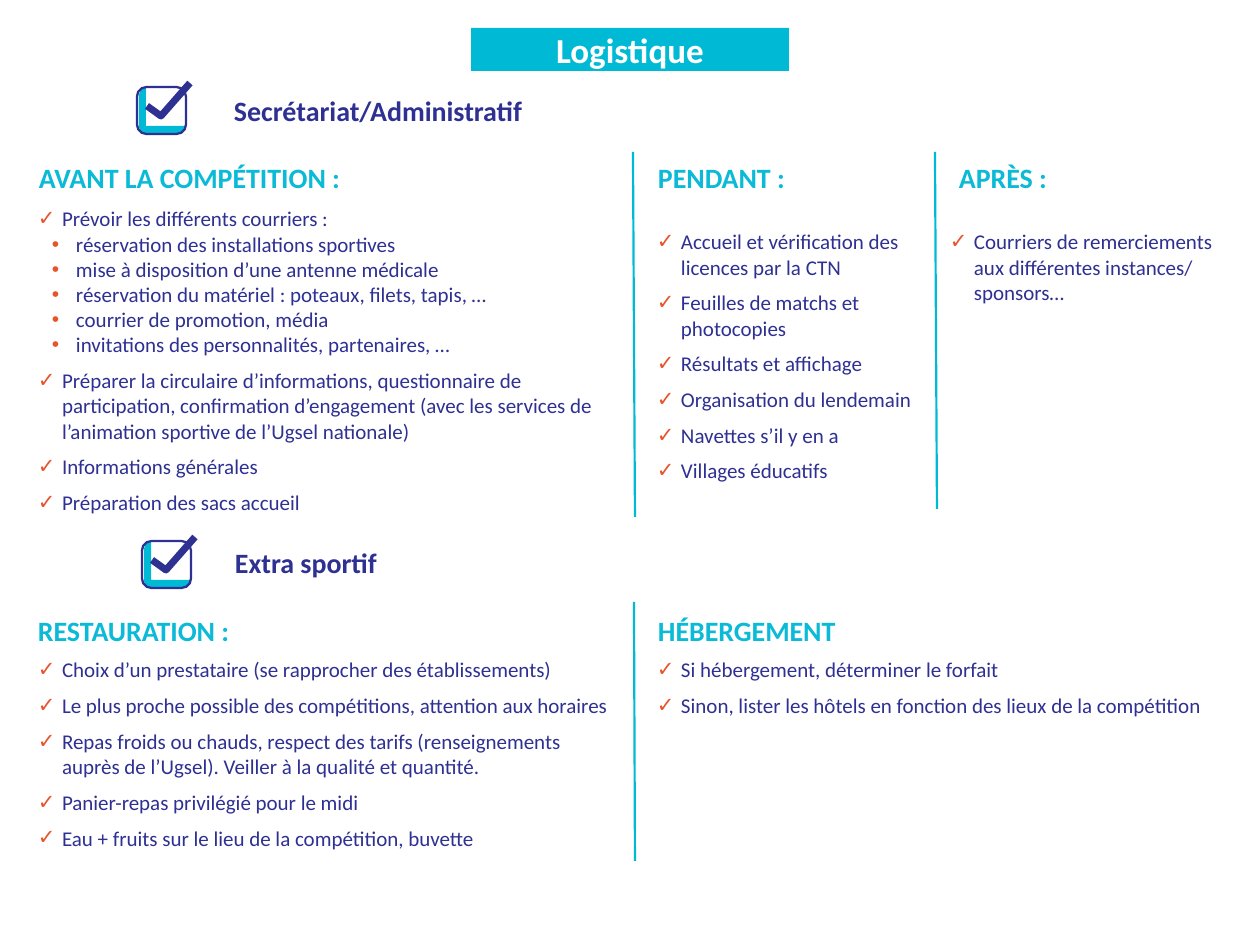
from dataclasses import dataclass

from lxml.etree import SubElement
from pptx import Presentation
from pptx.dml.color import RGBColor
from pptx.enum.shapes import MSO_CONNECTOR, MSO_SHAPE
from pptx.enum.text import MSO_ANCHOR, MSO_AUTO_SIZE, PP_ALIGN
from pptx.oxml.ns import qn
from pptx.util import Emu, Pt

EMU_PER_PX = 914400 / 126


@dataclass(frozen=True)
class Theme:
    font: str = "Calibri"
    bullet_font: str = "Arial"
    navy: RGBColor = RGBColor(0x2E, 0x30, 0x92)
    cyan: RGBColor = RGBColor(0x00, 0xBA, 0xD5)
    heading: RGBColor = RGBColor(0x0B, 0xBA, 0xD6)
    bullet: RGBColor = RGBColor(0xE8, 0x53, 0x2B)
    white: RGBColor = RGBColor(0xFF, 0xFF, 0xFF)
    title_size: int = 20
    heading_size: int = 16
    body_size: int = 12
    heading_leading: float = 19.1
    item_gap: int = 6
    divider_width: float = 1.25
    box_width: float = 1.3
    tick_width: int = 4


THEME = Theme()

SECTIONS = [
    ("Secrétariat/Administratif", (220, 93, 387, 35), (137, 87)),
    ("Extra sportif", (221, 545, 321, 35), (142, 541)),
]

HEADINGS = [
    ("AVANT LA COMPÉTITION :", (38, 160, 344, 35)),
    ("PENDANT :", (657, 160, 149, 35)),
    ("APRÈS :", (958, 160, 149, 35)),
    ("RESTAURATION :", (37, 613, 489, 35)),
    ("HÉBERGEMENT", (657, 613, 567, 35)),
]

LISTS = [
    ((37, 205, 583, 314), [
        ("Prévoir les différents courriers :", [
            "réservation des installations sportives",
            "mise à disposition d’une antenne médicale",
            "réservation du matériel : poteaux, filets, tapis, …",
            "courrier de promotion, média",
            "invitations des personnalités, partenaires, …",
        ]),
        ("Préparer la circulaire d’informations, questionnaire de participation, "
         "confirmation d’engagement (avec les services de l’animation sportive "
         "de l’Ugsel nationale)", []),
        ("Informations générales", []),
        ("Préparation des sacs accueil", []),
    ]),
    ((656, 228, 267, 295), [
        ("Accueil et vérification des licences par la CTN", []),
        ("Feuilles de matchs et photocopies", []),
        ("Résultats et affichage", []),
        ("Organisation du lendemain", []),
        ("Navettes s’il y en a", []),
        ("Villages éducatifs", []),
    ]),
    ((37, 656, 583, 197), [
        ("Choix d’un prestataire (se rapprocher des établissements)", []),
        ("Le plus proche possible des compétitions, attention aux horaires", []),
        ("Repas froids ou chauds, respect des tarifs (renseignements auprès "
         "de l’Ugsel). Veiller à la qualité et quantité.", []),
        ("Panier-repas privilégié pour le midi", []),
        ("Eau + fruits sur le lieu de la compétition, buvette", []),
    ]),
    ((656, 656, 583, 63), [
        ("Si hébergement, déterminer le forfait", []),
        ("Sinon, lister les hôtels en fonction des lieux de la compétition", []),
    ]),
    ((949, 228, 267, 78), [
        ("Courriers de remerciements aux différentes instances/ sponsors…", []),
    ]),
]

DIVIDERS = [
    (633, 152, 635, 517),
    (935, 152, 937, 509),
    (634, 602, 635, 861),
]

SHADE = [(8, 1), (5, 2), (3, 4), (2, 8), (2, 40), (3, 44), (7, 47),
         (44, 47), (49, 42), (49, 39), (9, 39), (9, 1)]
TICK = [(10, 19), (24, 29), (53, -4)]


def px(length):
    return Emu(round(length * EMU_PER_PX))


def apply(target, values):
    for attribute, value in values.items():
        setattr(target, attribute, value)


def place(shape, area, top_inset=0):
    apply(shape, dict(zip(("left", "top", "width", "height"), map(px, area))))
    apply(shape.text_frame, {
        "word_wrap": True, "auto_size": MSO_AUTO_SIZE.NONE,
        "vertical_anchor": MSO_ANCHOR.TOP, "margin_left": 0, "margin_right": 0,
        "margin_top": px(top_inset), "margin_bottom": 0,
    })
    return shape.text_frame


def write(paragraph, wording, size, color, bold=False):
    run = paragraph.add_run()
    run.text = wording
    apply(run.font, {"name": THEME.font, "size": Pt(size), "bold": bold})
    run.font.color.rgb = color


def indent(paragraph, left, first=0):
    properties = paragraph._p.get_or_add_pPr()
    properties.set("marL", str(px(left)))
    properties.set("indent", str(px(first)))
    return properties


def add_bullet(paragraph, mark, left):
    properties = indent(paragraph, left, -24)
    color = SubElement(properties, qn("a:buClr"))
    SubElement(color, qn("a:srgbClr"), val=str(THEME.bullet))
    SubElement(properties, qn("a:buFont"), typeface=THEME.bullet_font)
    SubElement(properties, qn("a:buChar"), char=mark)


def fill_title(title, wording):
    paragraph = place(title, (471, 28, 318, 43)).paragraphs[0]
    title.fill.solid()
    title.fill.fore_color.rgb = THEME.cyan
    paragraph.alignment = PP_ALIGN.CENTER
    write(paragraph, wording, THEME.title_size, THEME.white, bold=True)


def add_label(slide, wording, area, color, left, leading=None):
    frame = place(slide.shapes.add_textbox(0, 0, 0, 0), area, top_inset=1)
    paragraph = frame.paragraphs[0]
    indent(paragraph, left)
    paragraph.line_spacing = leading
    write(paragraph, wording, THEME.heading_size, color, bold=True)


def fill_list(holder, area, items):
    frame = place(holder, area, top_inset=1)
    entries = []
    for item, details in items:
        entries.append((item, "✓", 25, THEME.item_gap, 0, PP_ALIGN.LEFT))
        entries += [(detail, "•", 39, 0, 1, PP_ALIGN.JUSTIFY) for detail in details]
    for position, (wording, mark, left, gap, level, alignment) in enumerate(entries):
        paragraph = frame.add_paragraph() if position else frame.paragraphs[0]
        add_bullet(paragraph, mark, left)
        apply(paragraph, {"level": level, "alignment": alignment,
                          "space_before": Pt(gap if position else 0)})
        write(paragraph, wording, THEME.body_size, THEME.navy)


def set_outline(shape, color, width):
    shape.line.color.rgb = color
    shape.line.width = Pt(width)


def add_outline(group, points, origin, close):
    start, *rest = [(origin[0] + x, origin[1] + y) for x, y in points]
    builder = group.shapes.build_freeform(*start, scale=EMU_PER_PX)
    builder.add_line_segments(rest, close=close)
    outline = builder.convert_to_shape()
    outline.shadow.inherit = False
    return outline


def add_checkbox(slide, origin):
    group = slide.shapes.add_group_shape()
    shade = add_outline(group, SHADE, origin, close=True)
    shade.fill.solid()
    shade.fill.fore_color.rgb = THEME.cyan
    shade.line.fill.background()
    box = group.shapes.add_shape(MSO_SHAPE.ROUNDED_RECTANGLE, *map(px, (*origin, 49, 47)))
    box.adjustments[0] = 0.2
    box.shadow.inherit = False
    tick = add_outline(group, TICK, origin, close=False)
    for part, width in ((box, THEME.box_width), (tick, THEME.tick_width)):
        part.fill.background()
        set_outline(part, THEME.navy, width)


def add_divider(slide, ends):
    divider = slide.shapes.add_connector(MSO_CONNECTOR.STRAIGHT, *map(px, ends))
    set_outline(divider, THEME.cyan, THEME.divider_width)
    SubElement(divider._element.spPr, qn("a:effectLst"))


def main():
    presentation = Presentation()
    apply(presentation, {"slide_width": px(1260), "slide_height": px(945)})
    slide = presentation.slides.add_slide(presentation.slide_layouts.get_by_name("Comparison"))
    fill_title(slide.shapes.title, "Logistique")
    holders = [slide.placeholders[number] for number in range(1, 5)]
    holders.append(slide.shapes.add_textbox(0, 0, 0, 0))
    for holder, (area, items) in zip(holders, LISTS):
        fill_list(holder, area, items)
    for wording, area, origin in SECTIONS:
        add_checkbox(slide, origin)
        add_label(slide, wording, area, THEME.navy, 14)
    for wording, area in HEADINGS:
        add_label(slide, wording, area, THEME.heading, 1, Pt(THEME.heading_leading))
    for ends in DIVIDERS:
        add_divider(slide, ends)
    presentation.save("out.pptx")


if __name__ == "__main__":
    main()
